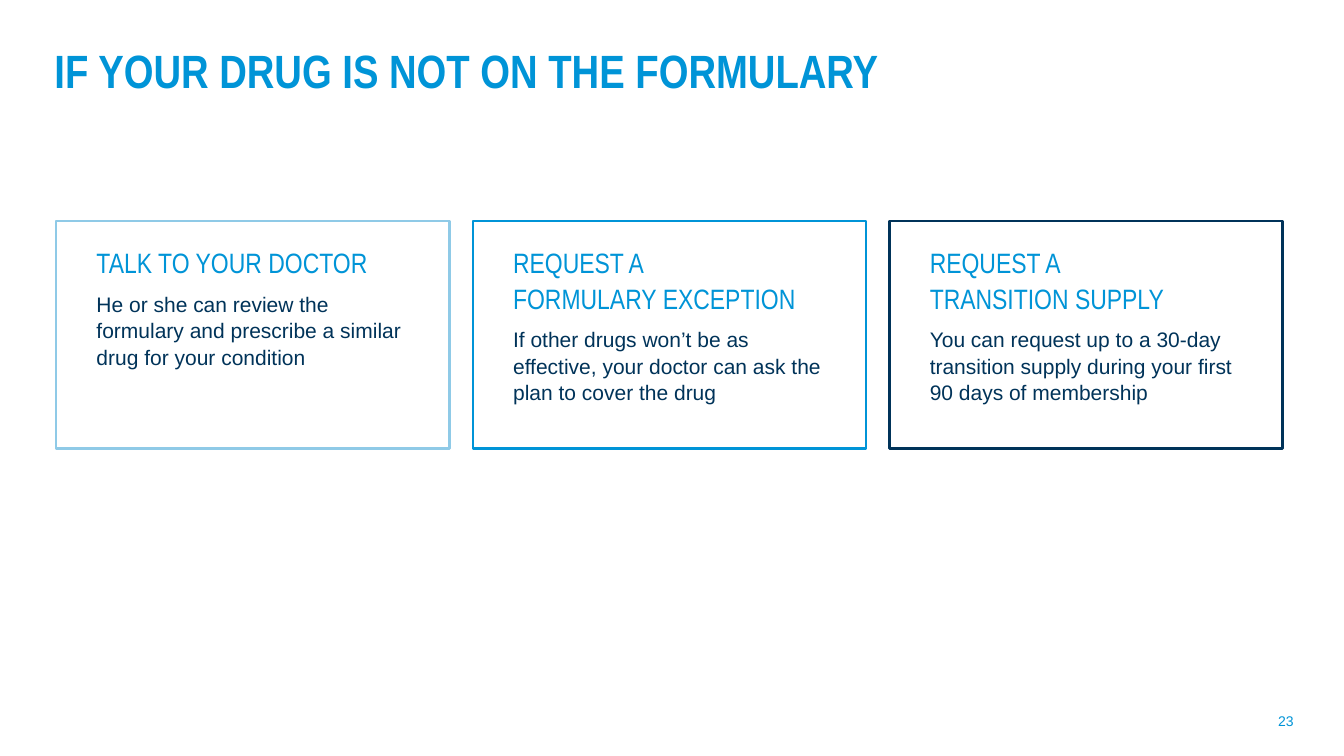
from dataclasses import dataclass

from pptx import Presentation
from pptx.dml.color import RGBColor
from pptx.enum import shapes, text
from pptx.util import Inches, Pt


@dataclass(frozen=True)
class Theme:
    blue: RGBColor = RGBColor(0x00, 0x94, 0xD7)
    pale: RGBColor = RGBColor(0x8F, 0xCA, 0xE7)
    navy: RGBColor = RGBColor(0x00, 0x33, 0x59)
    heading_font: str = "Arial Narrow"
    body_font: str = "Arial"
    title_size: int = 40
    heading_size: int = 24
    body_size: int = 18
    number_size: int = 12


THEME = Theme()

# Option cards: frame colour, heading lines, explanation
CARDS = [
    (THEME.pale, ["TALK TO YOUR DOCTOR"],
     "He or she can review the formulary and prescribe a similar drug for your condition"),
    (THEME.blue, ["REQUEST A", "FORMULARY EXCEPTION"],
     "If other drugs won’t be as effective, your doctor can ask the plan to cover the drug"),
    (THEME.navy, ["REQUEST A", "TRANSITION SUPPLY"],
     "You can request up to a 30-day transition supply during your first 90 days of membership"),
]
CARD_LEFT, CARD_TOP, CARD_WIDTH, CARD_HEIGHT = 0.67, 2.63, 4.68, 2.71
CARD_STEP = 4.96


def add_box(page, left, top, width, height):
    box = page.shapes.add_textbox(Inches(left), Inches(top), Inches(width), Inches(height))
    box.text_frame.word_wrap = True
    return box.text_frame


def write(para, lines, font, size, color, bold=False):
    for index, line in enumerate(lines):
        if index:
            para.add_line_break()
        span = para.add_run()
        span.text = line
        span.font.name = font
        span.font.size = Pt(size)
        span.font.color.rgb = color
        span.font.bold = bold


def add_title(page, title):
    para = add_box(page, 0.55, 0.53, 14.27, 1.23).paragraphs[0]
    para.line_spacing = 0.9
    write(para, [title], THEME.heading_font, THEME.title_size, THEME.blue, bold=True)


def add_card(page, left, color, heading, body):
    # Frame
    frame = page.shapes.add_shape(
        shapes.MSO_SHAPE.RECTANGLE, Inches(left), Inches(CARD_TOP),
        Inches(CARD_WIDTH), Inches(CARD_HEIGHT))
    frame.shadow.inherit = False
    frame.fill.background()
    frame.line.color.rgb = color
    frame.line.width = Pt(2)

    # Heading and explanation
    content = add_box(page, left + 0.38, CARD_TOP + 0.23, 4.02, 1.54 if len(heading) == 1 else 1.93)
    content.auto_size = text.MSO_AUTO_SIZE.SHAPE_TO_FIT_TEXT
    para = content.paragraphs[0]
    para.line_spacing = 1.05
    write(para, heading, THEME.heading_font, THEME.heading_size, THEME.blue)
    para = content.add_paragraph()
    para.line_spacing = 1.05
    para.space_before = Pt(9)
    write(para, [body], THEME.body_font, THEME.body_size, THEME.navy)


def add_page_number(page, number):
    content = add_box(page, 14.94, 8.34, 0.56, 0.48)
    content.vertical_anchor = text.MSO_ANCHOR.MIDDLE
    para = content.paragraphs[0]
    para.alignment = text.PP_ALIGN.RIGHT
    write(para, [number], THEME.body_font, THEME.number_size, THEME.blue)


def main():
    deck = Presentation()
    deck.slide_width, deck.slide_height = Inches(16), Inches(9)
    page = deck.slides.add_slide(deck.slide_layouts[6])

    add_title(page, "IF YOUR DRUG IS NOT ON THE FORMULARY")
    for index, (color, heading, body) in enumerate(CARDS):
        add_card(page, CARD_LEFT + index * CARD_STEP, color, heading, body)
    add_page_number(page, "23")

    deck.save("out.pptx")


if __name__ == "__main__":
    main()
